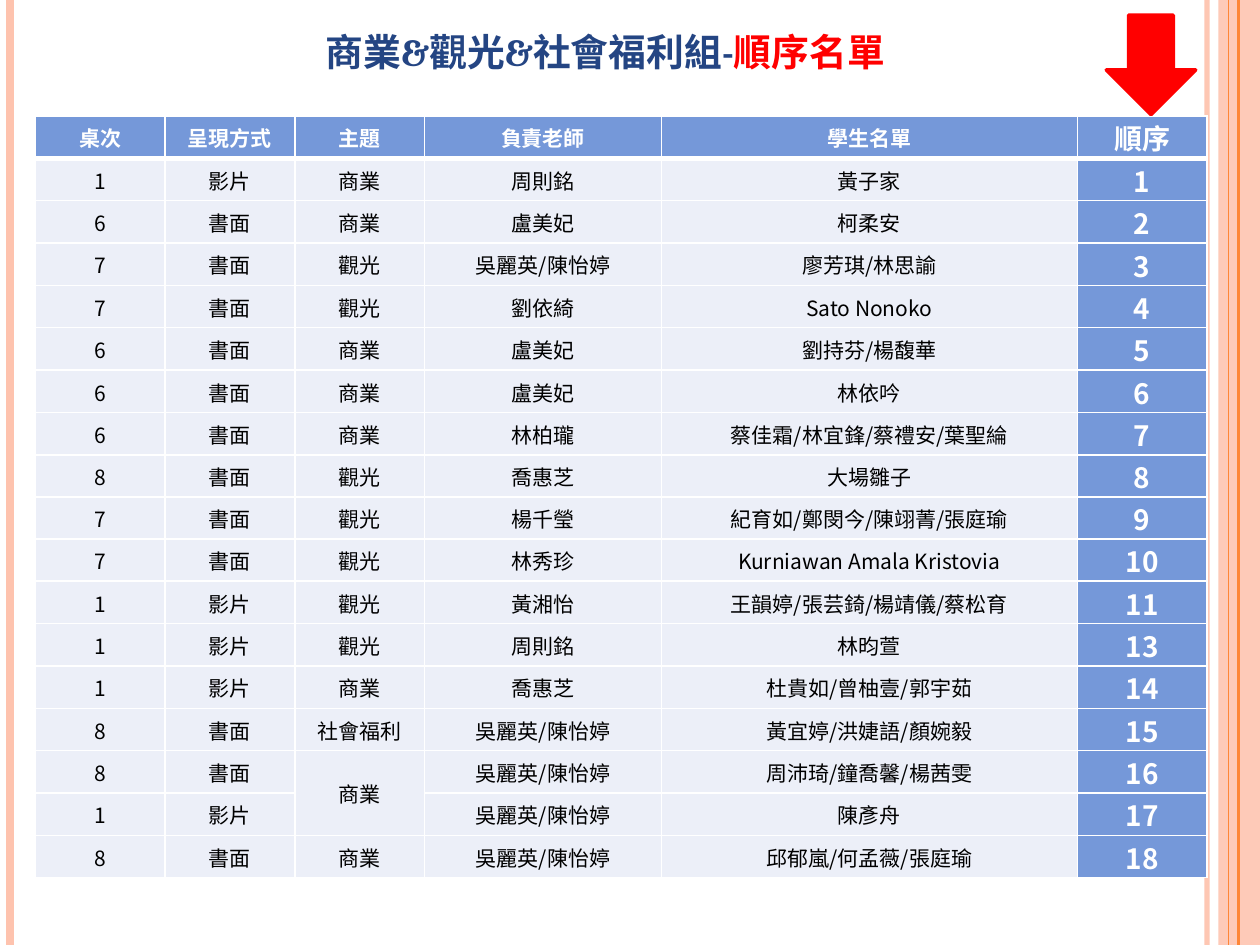
from dataclasses import dataclass

from lxml import etree
from pptx import Presentation
from pptx import util as u
from pptx.dml.color import RGBColor
from pptx.enum import shapes, text
from pptx.oxml.ns import qn

HEADINGS = ["桌次", "呈現方式", "主題", "負責老師", "學生名單", "順序"]
ENTRIES = [
    ("1", "影片", "商業", "周則銘", "黃子家", "1"),
    ("6", "書面", "商業", "盧美妃", "柯柔安", "2"),
    ("7", "書面", "觀光", "吳麗英/陳怡婷", "廖芳琪/林思諭", "3"),
    ("7", "書面", "觀光", "劉依綺", "Sato Nonoko", "4"),
    ("6", "書面", "商業", "盧美妃", "劉持芬/楊馥華", "5"),
    ("6", "書面", "商業", "盧美妃", "林依吟", "6"),
    ("6", "書面", "商業", "林柏瓏", "蔡佳霜/林宜鋒/蔡禮安/葉聖綸", "7"),
    ("8", "書面", "觀光", "喬惠芝", "大場雛子", "8"),
    ("7", "書面", "觀光", "楊千瑩", "紀育如/鄭閔今/陳翊菁/張庭瑜", "9"),
    ("7", "書面", "觀光", "林秀珍", "Kurniawan Amala Kristovia", "10"),
    ("1", "影片", "觀光", "黃湘怡", "王韻婷/張芸錡/楊靖儀/蔡松育", "11"),
    ("1", "影片", "觀光", "周則銘", "林昀萱", "13"),
    ("1", "影片", "商業", "喬惠芝", "杜貴如/曾柚壹/郭宇茹", "14"),
    ("8", "書面", "社會福利", "吳麗英/陳怡婷", "黃宜婷/洪婕語/顏婉毅", "15"),
    ("8", "書面", "商業", "吳麗英/陳怡婷", "周沛琦/鐘喬馨/楊茜雯", "16"),
    ("1", "影片", None, "吳麗英/陳怡婷", "陳彥舟", "17"),  # None joins the cell above
    ("8", "書面", "商業", "吳麗英/陳怡婷", "邱郁嵐/何孟薇/張庭瑜", "18"),
]
COLUMN_WIDTHS = [1.03, 1.03, 1.03, 1.88, 3.3, 1.03]
TABLE_HEIGHT, SHORT_ROW, SHORT_ROW_HEIGHT = 5.99, 9, 0.27


@dataclass(frozen=True)
class Theme:
    navy: str = "244583"
    red: str = "FF0000"
    blue: str = "7598D9"
    pale: str = "ECEFF8"
    peach: str = "FEC3AE"
    orange: str = "FE8637"
    white: str = "FFFFFF"
    black: str = "000000"
    title_font: str = "Cambria"
    body_font: str = "Noto Sans CJK SC"
    title_size: int = 27
    order_size: int = 16
    body_size: int = 12


THEME = Theme()
# x, colour, width in points, opacity in percent
STRIPES = [
    (9.58, THEME.peach, 3, 93),
    (0.08, THEME.peach, 4.5, 100),
    (9.83, THEME.orange, 1.5, 100),
    (9.75, THEME.orange, 0.75, 100),
]


def rgb(value):
    return RGBColor.from_string(value)


def set_opacity(element, percent):
    if percent < 100:
        color = next(element.iter(qn("a:srgbClr")))
        etree.SubElement(color, qn("a:alpha")).set("val", str(percent * 1000))


def add_text(paragraph, content, *, color, size=THEME.body_size, bold=False,
             font=THEME.body_font, small_caps=False):
    paragraph.alignment = text.PP_ALIGN.CENTER
    run = paragraph.add_run()
    run.text = content
    run.font.name, run.font.size, run.font.bold = font, u.Pt(size), bold
    run.font.color.rgb = rgb(color)
    properties = run.font._element
    etree.SubElement(properties, qn("a:ea")).set("typeface", THEME.body_font)
    if small_caps:
        properties.set("cap", "small")


def add_stripe(slide, x, color, width, opacity):
    stripe = slide.shapes.add_connector(
        shapes.MSO_CONNECTOR.STRAIGHT, u.Inches(x), 0, u.Inches(x), u.Inches(7.5))
    stripe.line.color.rgb = rgb(color)
    stripe.line.width = u.Pt(width)
    properties = stripe._element.spPr
    set_opacity(properties, opacity)
    etree.SubElement(properties, qn("a:effectLst"))


def add_block(slide, preset, box, color, opacity=100, line_width=0):
    block = slide.shapes.add_shape(preset, *map(u.Inches, box))
    block.shadow.inherit = False
    block.fill.solid()
    block.fill.fore_color.rgb = rgb(color)
    set_opacity(block._element.spPr, opacity)
    if line_width:
        block.line.color.rgb = rgb(color)
        block.line.width = u.Pt(line_width)
    else:
        block.line.fill.background()


def set_borders(cell, top, bottom):
    properties = cell._tc.get_or_add_tcPr()
    for side, width in (("L", 1), ("R", 1), ("T", top), ("B", bottom)):
        border = etree.SubElement(properties, qn(f"a:ln{side}"), w=str(u.Pt(width)))
        fill = etree.SubElement(border, qn("a:solidFill"))
        etree.SubElement(fill, qn("a:srgbClr")).set("val", THEME.white)


def style_cell(cell, fill, row):
    set_borders(cell, top=3 if row == 1 else 1, bottom=3 if row == 0 else 1)
    cell.fill.solid()
    cell.fill.fore_color.rgb = rgb(fill)
    cell.vertical_anchor = text.MSO_ANCHOR.MIDDLE
    cell.margin_left = cell.margin_right = cell.margin_top = u.Inches(0.01)
    cell.margin_bottom = 0


def add_roster(slide):
    rows = [HEADINGS, *ENTRIES]
    roster = slide.shapes.add_table(
        len(rows), len(HEADINGS), u.Inches(0.28), u.Inches(0.92),
        u.Inches(sum(COLUMN_WIDTHS)), u.Inches(TABLE_HEIGHT)).table
    roster.horz_banding = False
    for column, width in zip(roster.columns, COLUMN_WIDTHS):
        column.width = u.Inches(width)
    row_height = (TABLE_HEIGHT - SHORT_ROW_HEIGHT) / (len(rows) - 1)
    for r, values in enumerate(rows):
        roster.rows[r].height = u.Inches(SHORT_ROW_HEIGHT if r == SHORT_ROW else row_height)
        for c, value in enumerate(values):
            cell = roster.cell(r, c)
            is_order = c == len(HEADINGS) - 1
            accented = r == 0 or is_order
            style_cell(cell, THEME.blue if accented else THEME.pale, r)
            if value is None:
                roster.cell(r - 1, c).merge(cell)
                continue
            add_text(cell.text_frame.paragraphs[0], value, bold=accented,
                     color=THEME.white if accented else THEME.black,
                     size=THEME.order_size if is_order else THEME.body_size)


def add_title(slide):
    frame = slide.shapes.add_textbox(
        u.Inches(0.72), u.Inches(0.22), u.Inches(8.17), u.Inches(0.85)).text_frame
    frame.word_wrap = True
    frame.vertical_anchor = text.MSO_ANCHOR.BOTTOM
    frame.margin_bottom = u.Inches(0.47)
    for content, color in (("商業&觀光&社會福利組-", THEME.navy), ("順序名單", THEME.red)):
        add_text(frame.paragraphs[0], content, color=color, size=THEME.title_size,
                 bold=True, font=THEME.title_font, small_caps=True)


def main():
    deck = Presentation()
    deck.slide_width, deck.slide_height = u.Inches(10), u.Inches(7.5)
    slide = deck.slides.add_slide(deck.slide_layouts[6])
    add_block(slide, shapes.MSO_SHAPE.RECTANGLE, (9.67, 0, 0.33, 7.5), THEME.peach, opacity=87)
    for stripe in STRIPES:
        add_stripe(slide, *stripe)
    add_roster(slide)
    add_title(slide)
    add_block(slide, shapes.MSO_SHAPE.DOWN_ARROW, (8.78, 0.12, 0.71, 0.79), THEME.red,
              line_width=2)
    deck.save("out.pptx")


if __name__ == "__main__":
    main()
